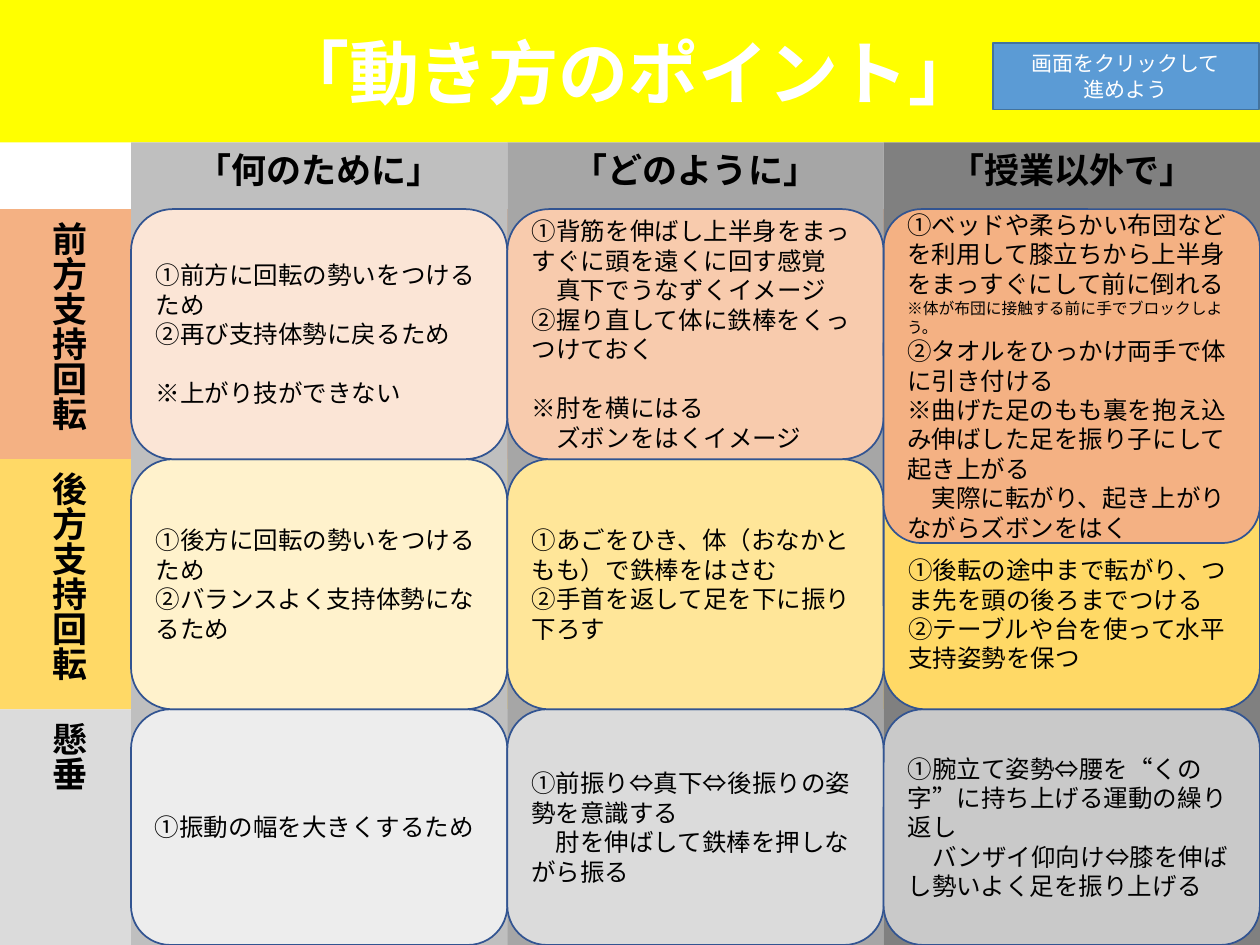
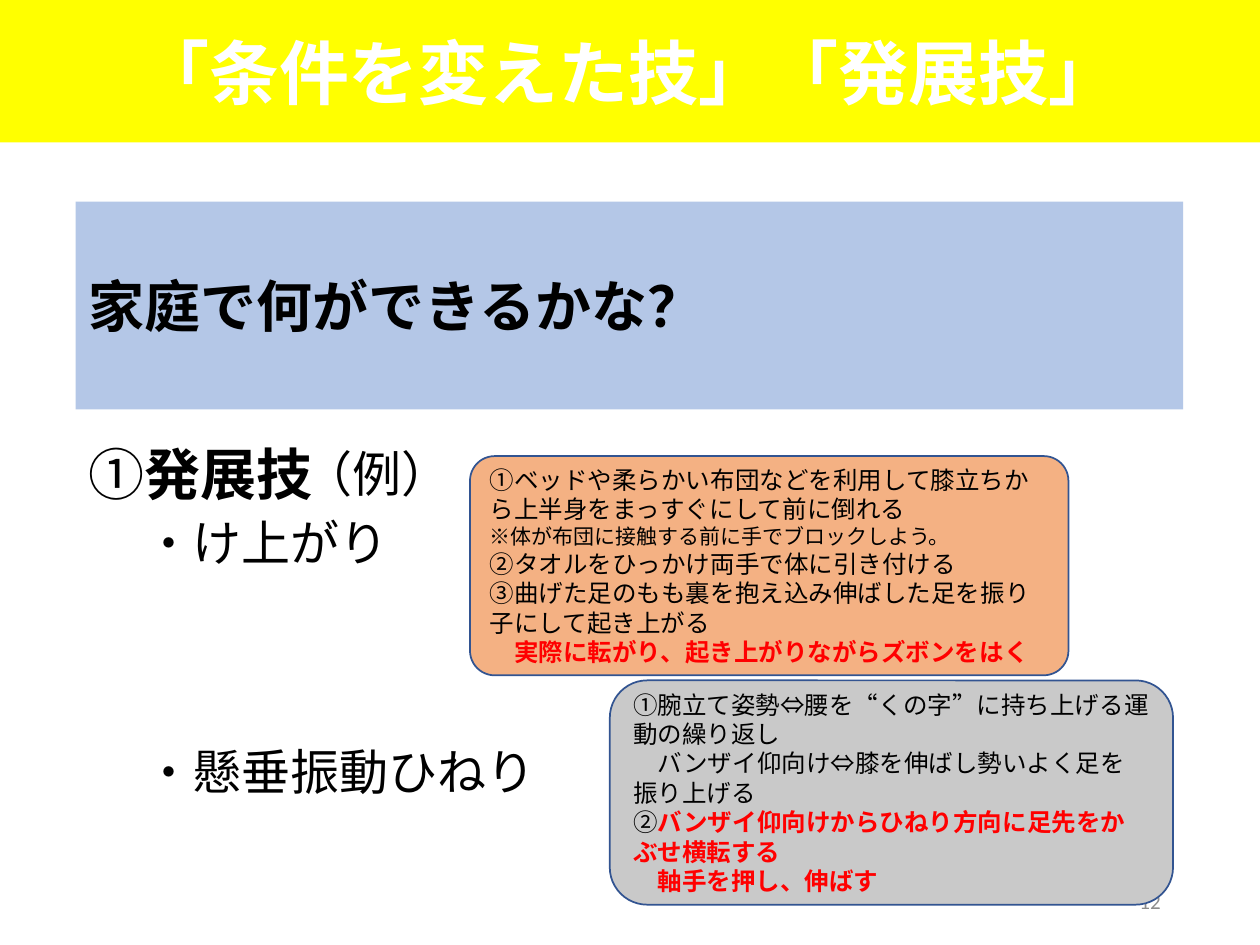
"""Builds two slides on horizontal bar skills: a grid of movement points and a page of advanced skills."""
from pptx import Presentation
from pptx import util as u
from pptx.dml.color import RGBColor
from pptx.enum import shapes, text


class Theme:
    yellow, white, black, red = "FFFF00", "FFFFFF", "000000", "FF0000"
    edge, blue, rim, pale, grey = "325491", "5B9BD5", "43739E", "B4C7E7", "8C8C8C"
    heads = ["BFBFBF", "A6A6A6", "808080"]
    bands = ["F4B183", "FFD966", "DBDBDB"]
    tints = [["FBE5D6", "F8CBAD", "F4B183"],
             ["FFF2CC", "FFE699", "FFD966"],
             ["EDEDED", "DBDBDB", "C9C9C9"]]
    body, cjk = "Calibri", "Noto Sans CJK JP"
    title, lead, item, head, cell, small, tiny = 40, 32, 28, 20, 14, 12, 9


RECT, ROUND = shapes.MSO_SHAPE.RECTANGLE, shapes.MSO_SHAPE.ROUNDED_RECTANGLE
MID, TOP, LOW = text.MSO_ANCHOR.MIDDLE, text.MSO_ANCHOR.TOP, text.MSO_ANCHOR.BOTTOM
LEFT, MIDST, RIGHT = text.PP_ALIGN.LEFT, text.PP_ALIGN.CENTER, text.PP_ALIGN.RIGHT

deck = Presentation()
deck.slide_width, deck.slide_height = u.Inches(10), u.Inches(7.5)


def box(page, kind, spot, fill, line=None):
    """Add a filled shape at (left, top, width, height) in inches."""
    form = page.shapes.add_shape(kind, *map(u.Inches, spot))
    form.shadow.inherit = False
    form.fill.solid()
    form.fill.fore_color.rgb = RGBColor.from_string(fill)
    if line:
        form.line.color.rgb = RGBColor.from_string(line)
        form.line.width = u.Pt(1)
    else:
        form.line.fill.background()
    return form


def write(form, paras, size, color=Theme.black, bold=False, align=LEFT, anchor=MID, font=Theme.body):
    """Fill a shape with paragraphs, each a list of (text, changes) runs or plain strings."""
    frame = form.text_frame
    frame.word_wrap, frame.vertical_anchor = True, anchor
    for n, runs in enumerate(paras):
        para = frame.paragraphs[0] if n == 0 else frame.add_paragraph()
        para.alignment = align
        for part in [runs] if isinstance(runs, str) else runs:
            words, change = (part, {}) if isinstance(part, str) else part
            run = para.add_run()
            run.text = words
            run.font.name = font
            run.font.size = u.Pt(change.get("size", size))
            run.font.bold = change.get("bold", bold)
            run.font.color.rgb = RGBColor.from_string(change.get("color", color))
    return frame


HOT = {"color": Theme.red, "bold": True}
top = 1.13
pages = []
for name in ["「動き方のポイント」", "「条件を変えた技」「発展技」"]:
    page = deck.slides.add_slide(deck.slide_layouts[5])
    band = page.shapes.title
    band.left, band.top, band.width, band.height = map(u.Inches, (-0.02, 0, 10.02, top))
    band.fill.solid()
    band.fill.fore_color.rgb = RGBColor.from_string(Theme.yellow)
    frame = write(band, [name], Theme.title, Theme.white, True, MIDST, font=Theme.cjk)
    frame.auto_size, frame.word_wrap = text.MSO_AUTO_SIZE.NONE, False
    pages.append(page)
grid, more = pages

bed = "①ベッドや柔らかい布団などを利用して膝立ちから上半身をまっすぐにして前に倒れる"
block = "※体が布団に接触する前に手でブロックしよう。"
towel = "②タオルをひっかけ両手で体に引き付ける"
curl = "曲げた足のもも裏を抱え込み伸ばした足を振り子にして起き上がる"
roll = "実際に転がり、起き上がりながらズボンをはく"
plank = ["①腕立て姿勢⇔腰を“くの字”に持ち上げる運動の繰り返し",
         "　バンザイ仰向け⇔膝を伸ばし勢いよく足を振り上げる"]

side = 1.04
wide = (10 - side) / 3
rows = [1.66, 3.645, 5.63, 7.5]
heads = ["「何のために」", "「どのように」", "「授業以外で」"]
names = ["前方支持回転", "後方支持回転", "懸垂"]
cells = [
    [["①前方に回転の勢いをつけるため", "②再び支持体勢に戻るため", "※上がり技ができない"],
     ["①背筋を伸ばし上半身をまっすぐに頭を遠くに回す感覚", "　真下でうなずくイメージ",
      "②握り直して体に鉄棒をくっつけておく", "※肘を横にはる", "　ズボンをはくイメージ"],
     [bed, [(block, {"size": Theme.tiny})], towel, "※" + curl, "　" + roll]],
    [["①後方に回転の勢いをつけるため", "②バランスよく支持体勢になるため"],
     ["①あごをひき、体（おなかともも）で鉄棒をはさむ", "②手首を返して足を下に振り下ろす"],
     ["①後転の途中まで転がり、つま先を頭の後ろまでつける", "②テーブルや台を使って水平支持姿勢を保つ"]],
    [["①振動の幅を大きくするため"],
     ["①前振り⇔真下⇔後振りの姿勢を意識する", "　肘を伸ばして鉄棒を押しながら振る"],
     plank],
]

for r, name in enumerate(names):
    band = box(grid, RECT, (-0.02, rows[r], 10.02, rows[r + 1] - rows[r]), Theme.bands[r])
    frame = write(band, [name], Theme.head, bold=True, anchor=LOW)
    frame.margin_left = u.Inches(0.4)
    band.text_frame._txBody.bodyPr.set("vert", "eaVert")

for c, name in enumerate(heads):
    post = box(grid, RECT, (side + c * wide, top, wide, 7.5 - top), Theme.heads[c])
    write(post, [name], Theme.head, bold=True, align=MIDST, anchor=TOP)

for r in (2, 1, 0):
    for c in range(3):
        tall = 2.65 if (r, c) == (0, 2) else rows[r + 1] - rows[r]
        card = box(grid, ROUND, (side + c * wide, rows[r], wide, tall), Theme.tints[r][c], Theme.edge)
        frame = write(card, cells[r][c], Theme.cell)
        if (r, c) == (0, 2):
            card.adjustments[0] = 0.113
        elif (r, c) == (1, 2):
            frame.margin_top = u.Inches(0.52)
        elif r == 0:
            frame.paragraphs[2 + c].space_before = u.Pt(17)

hint = box(grid, RECT, (7.88, 0.34, 2.11, 0.53), Theme.blue, Theme.rim)
write(hint, ["画面をクリックして", "進めよう"], Theme.small, Theme.white, align=MIDST, font=Theme.cjk)

num = more.shapes.add_textbox(*map(u.Inches, (7.06, 6.95, 2.25, 0.4)))
write(num, ["12"], Theme.small, Theme.grey, align=RIGHT)

ask = box(more, RECT, (0.6, 1.6, 8.79, 1.65), Theme.pale)
write(ask, ["家庭で何ができるかな？"], Theme.lead, bold=True)

for y, tall, runs in [
    (3.42, 0.67, ["①", ("発展技", {"bold": True})]),
    (4.09, 0.38, ["　", ("・け上がり", {"size": Theme.item})]),
    (5.91, 0.38, ["　", ("・懸垂振動ひねり", {"size": Theme.item})]),
]:
    write(box(more, RECT, (0.6, y, 9.25, tall), Theme.white), [runs], Theme.lead)

kip = box(more, ROUND, (3.73, 3.62, 4.75, 1.74), Theme.tints[0][2], Theme.edge)
kip.adjustments[0] = 0.113
write(kip, [bed, [(block, {"size": Theme.small})], towel, "③" + curl, ["　", (roll, HOT)]], Theme.cell)

twist = box(more, ROUND, (4.84, 5.4, 4.47, 1.78), Theme.tints[2][2], Theme.edge)
write(twist, plank + [["②", ("バンザイ仰向けからひねり方向に足先をかぶせ横転する", HOT)],
                      [("　軸手を押し、伸ばす", HOT)]], Theme.cell)

note = more.shapes.add_textbox(*map(u.Inches, (2.31, 3.56, 1.42, 0.38)))
write(note, ["（例）"], Theme.item)

deck.save("out.pptx")
